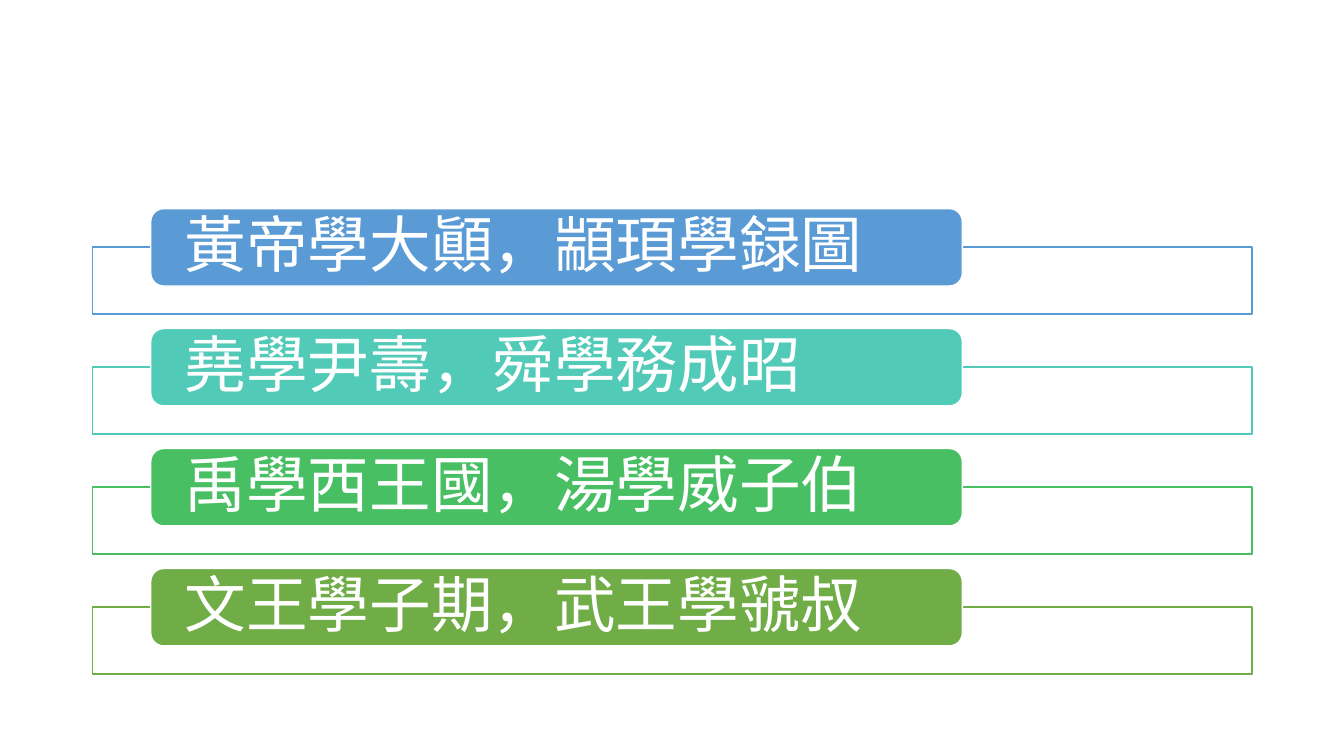
from lxml import etree
from pptx import Presentation
from pptx.dml.color import RGBColor
from pptx.enum.shapes import MSO_SHAPE
from pptx.enum.text import MSO_ANCHOR, PP_ALIGN
from pptx.oxml.ns import qn
from pptx.util import Inches, Pt

RECTANGLE = MSO_SHAPE.RECTANGLE
ROUNDED = MSO_SHAPE.ROUNDED_RECTANGLE
MIDDLE = MSO_ANCHOR.MIDDLE
LEFT = PP_ALIGN.LEFT

WHITE = RGBColor(0xFF, 0xFF, 0xFF)
BLUE = RGBColor(0x5B, 0x9B, 0xD5)
TEAL = RGBColor(0x52, 0xCA, 0xB8)
GREEN = RGBColor(0x49, 0xBF, 0x64)
OLIVE = RGBColor(0x70, 0xAD, 0x47)
FONT = "Noto Sans CJK SC"

SLIDE_WIDTH, SLIDE_HEIGHT = 13.33, 7.5
LIST_BOX = (0.92, 2.07, 11.5, 4.76)  # left, top, width, height in inches
TEACHERS = [
    ("黃帝學大顚，顓頊學録圖", BLUE),
    ("堯學尹壽，舜學務成昭", TEAL),
    ("禹學西王國，湯學威子伯", GREEN),
    ("文王學子期，武王學虢叔", OLIVE),
]


def add_box(slide, preset, box, fill, line):
    shape = slide.shapes.add_shape(preset, *(Inches(length) for length in box))
    shape.shadow.inherit = False
    shape.fill.solid()
    shape.fill.fore_color.rgb = fill
    shape.line.color.rgb = line
    shape.line.width = Pt(1)
    return shape


def set_opacity(shape, percent):
    color = shape._element.spPr.find(qn("a:solidFill"))[0]
    etree.SubElement(color, qn("a:alpha")).set("val", str(percent * 1000))


def write_text(shape, text, size=44, color=WHITE, font=FONT, side_inset=0.3):
    frame = shape.text_frame
    frame.word_wrap = True
    frame.vertical_anchor = MIDDLE
    frame.margin_left = frame.margin_right = Inches(side_inset)
    frame.margin_top = frame.margin_bottom = 0
    paragraph = frame.paragraphs[0]
    paragraph.alignment = LEFT
    paragraph.line_spacing = 0.9
    run = paragraph.add_run()
    run.text = text
    run.font.size = Pt(size)
    run.font.color.rgb = color
    run.font.name = font
    east_asian = etree.SubElement(run.font._element, qn("a:ea"))
    east_asian.set("typeface", font)


def add_teacher_row(slide, box, text, color):
    """Draw an outlined panel with a titled bar overlapping its top edge."""
    left, top, width, height = box
    panel = (left, top + 0.32 * height, width, 0.56 * height)
    bar = (left + 0.05 * width, top, 0.7 * width, 0.645 * height)
    set_opacity(add_box(slide, RECTANGLE, panel, WHITE, color), 90)
    write_text(add_box(slide, ROUNDED, bar, color, WHITE), text)


def add_teacher_list(slide, box):
    left, top, width, height = box
    row_height = height / len(TEACHERS)
    for index, (text, color) in enumerate(TEACHERS):
        row = (left, top + index * row_height, width, row_height)
        add_teacher_row(slide, row, text, color)


def main():
    presentation = Presentation()
    presentation.slide_width = Inches(SLIDE_WIDTH)
    presentation.slide_height = Inches(SLIDE_HEIGHT)
    slide = presentation.slides.add_slide(presentation.slide_layouts[6])
    add_teacher_list(slide, LIST_BOX)
    presentation.save("out.pptx")


if __name__ == "__main__":
    main()
